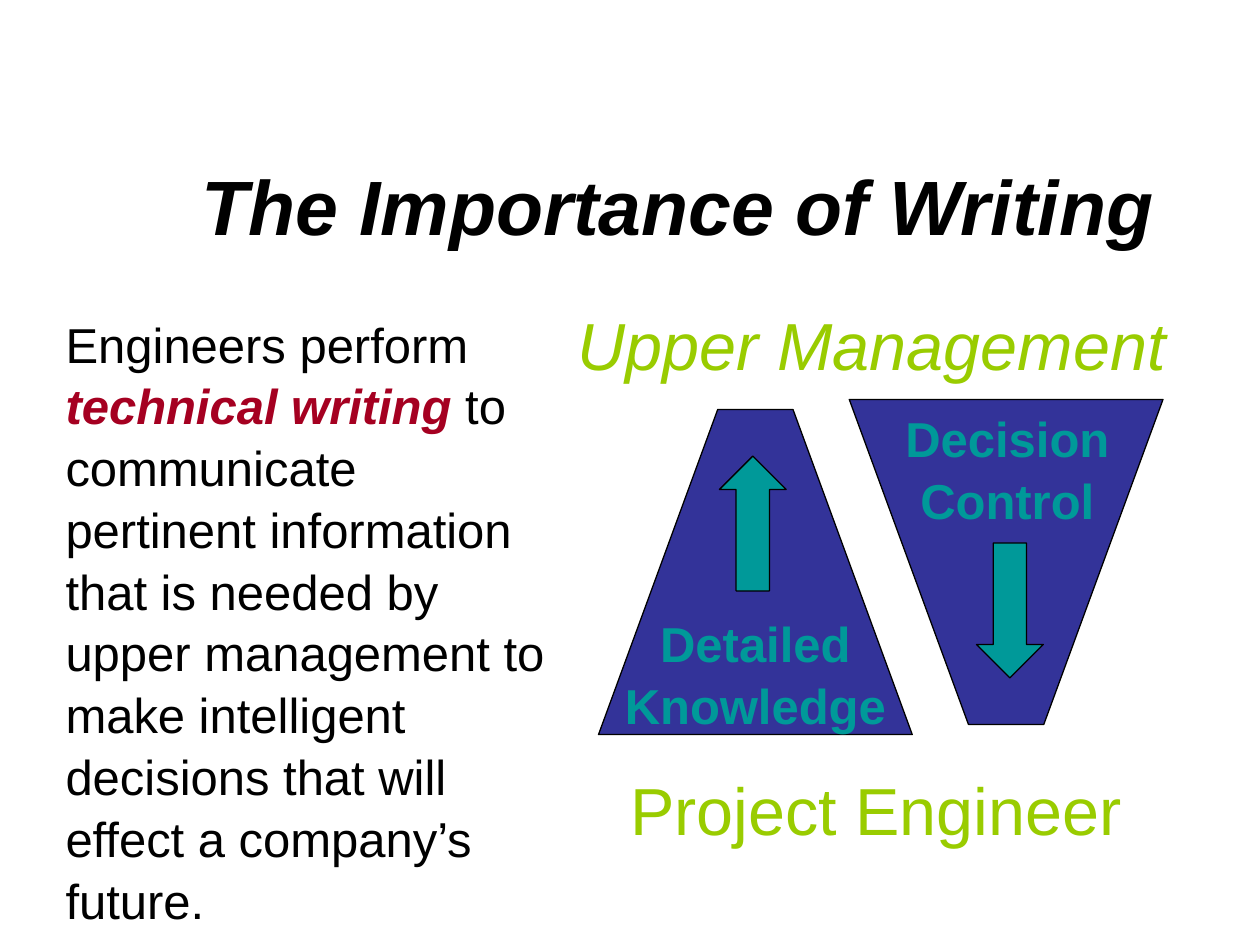
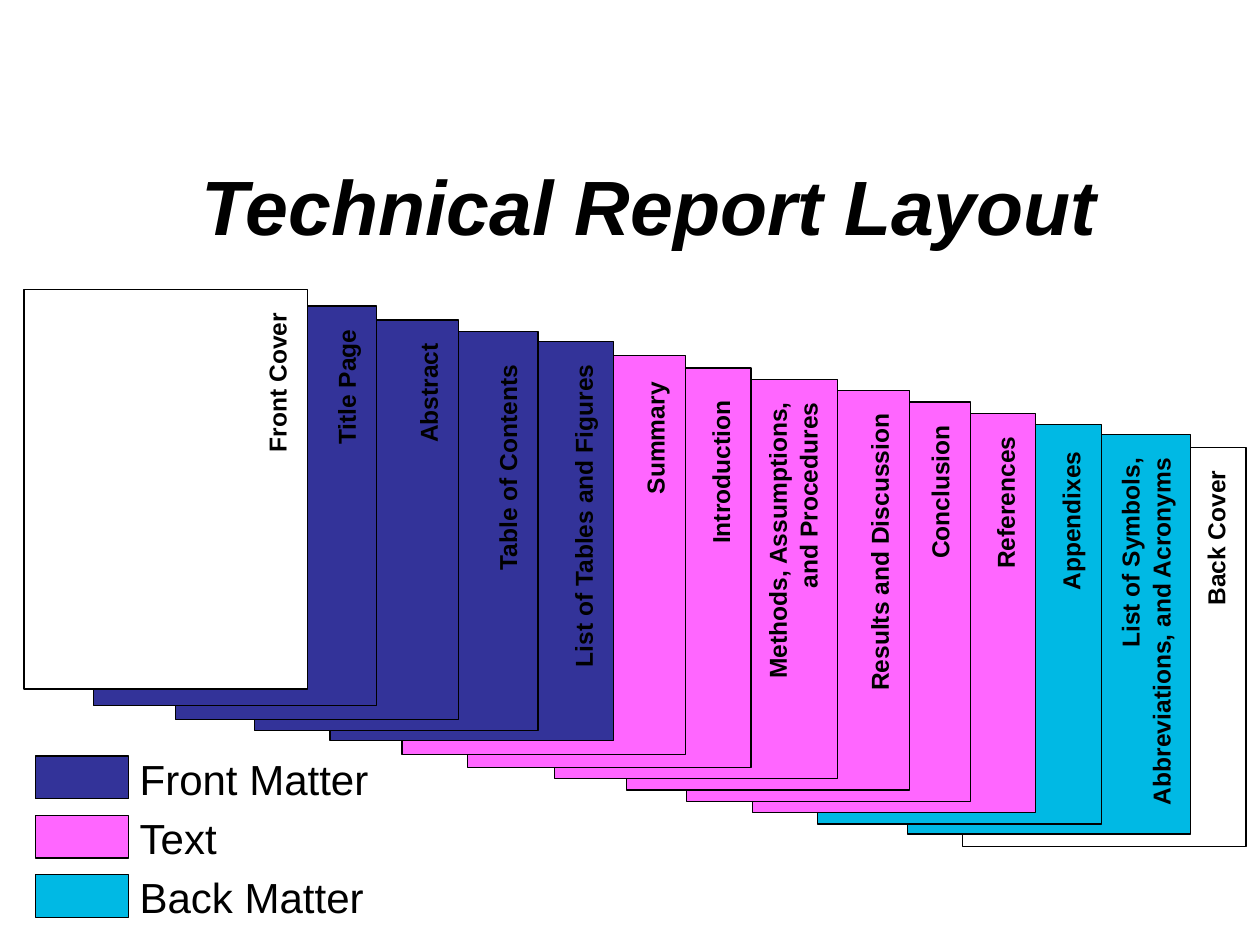
from dataclasses import dataclass
from typing import Any

from lxml.etree import SubElement
from pptx import Presentation
from pptx.dml.color import RGBColor
from pptx.enum.shapes import MSO_SHAPE
from pptx.enum.text import MSO_ANCHOR, MSO_AUTO_SIZE, PP_ALIGN
from pptx.oxml.ns import qn
from pptx.util import Inches, Pt

BLACK = RGBColor(0x00, 0x00, 0x00)
WHITE = RGBColor(0xFF, 0xFF, 0xFF)
NAVY = RGBColor(0x33, 0x33, 0x99)
PINK = RGBColor(0xFF, 0x66, 0xFF)
CYAN = RGBColor(0x00, 0xB9, 0xE4)
TEAL = RGBColor(0x00, 0x99, 0x99)
LIME = RGBColor(0x99, 0xCC, 0x00)
RED = RGBColor(0xA5, 0x00, 0x21)

# The slide is a grid of 100 columns by 75 rows of square cells.
COLS, ROWS = 100, 75
CELL = Inches(10) // COLS

TITLE = {"size": Pt(44), "bold": True, "italic": True}
BODY = {"size": Pt(28)}
TERM = {"bold": True, "italic": True, "color": RED}
ROLE = {"size": Pt(38), "color": LIME}
FLOW = {"size": Pt(28), "bold": True, "color": TEAL}
KEY = {"size": Pt(24)}
TAB = {"size": Pt(14), "bold": True}


@dataclass(frozen=True)
class Box:
    """A place on the grid, in columns and rows."""
    left: float
    top: float
    width: float
    height: float

    def place(self) -> list[int]:
        return [cells(n) for n in (self.left, self.top, self.width, self.height)]


@dataclass(frozen=True)
class Flow:
    """A tapered panel with its caption and arrow."""
    text: str
    box: Box
    words: Box
    arrow: Box
    down: bool


@dataclass(frozen=True)
class Page:
    """A report sheet; span is the length of its upright label."""
    text: str
    left: float
    top: float
    fill: RGBColor
    span: float = 13.3
    align: PP_ALIGN = PP_ALIGN.RIGHT
    lines: int = 1
    gap: float = 0.85


TITLE_BOX = Box(15, 11.7, 83.3, 8.3)
BODY_BOX = Box(4.2, 24.2, 40.8, 47.7)
SHEET_W, SHEET_H = 22.5, 31.7
TAPER = 0.38

ROLES = [
    ("Upper Management", Box(44.2, 23.3, 50, 7.3), True),
    ("Project Engineer", Box(45.8, 60.2, 47.5, 7.3), False),
]
FLOWS = [
    Flow("Detailed Knowledge", Box(47.5, 32.5, 24.9, 25.8),
         Box(48.3, 48, 23.3, 10.3), Box(57.1, 36.2, 5.3, 10.7), False),
    Flow("Decision Control", Box(67.4, 31.7, 24.9, 25.8),
         Box(68.3, 31.7, 23.3, 10.3), Box(77.5, 43.1, 5.3, 10.7), True),
]
KEYS = [("Front Matter", NAVY), ("Text", PINK), ("Back Matter", CYAN)]
PAGES = [
    Page("Front Cover", 1.9, 23, WHITE),
    Page("Title Page", 7.4, 24.3, NAVY),
    Page("Abstract", 13.9, 25.4, NAVY),
    Page("Table of Contents", 20.2, 26.3, NAVY, 19.1, PP_ALIGN.LEFT),
    Page("List of Tables and Figures", 26.2, 27.1, NAVY, 26.4),
    Page("Summary", 31.9, 28.2, PINK, 13.8, gap=1.15),
    Page("Introduction", 37.1, 29.2, PINK, 13.8, PP_ALIGN.LEFT, gap=1.15),
    Page("Methods, Assumptions, and Procedures", 44, 30.1, PINK, 26.6, lines=2),
    Page("Results and Discussion", 49.7, 31, PINK, 26.6),
    Page("Conclusion", 54.5, 31.9, PINK, 26.6),
    Page("References", 59.7, 32.8, PINK, 26.6),
    Page("Appendixes", 64.9, 33.7, CYAN, 13.3, PP_ALIGN.LEFT),
    Page("List of Symbols, Abbreviations, and Acronyms", 72, 34.5, CYAN, 29.8, lines=2),
    Page("Back Cover", 76.4, 35.5, WHITE),
]


def cells(count: float) -> int:
    return round(count * CELL)


def style(font: Any, form: dict[str, Any]) -> None:
    """Apply a format; anything it leaves out is plain black Arial."""
    look = {"name": "Arial", "bold": False, "italic": False, "color": BLACK, **form}
    font.color.rgb = look.pop("color")
    for name, value in look.items():
        setattr(font, name, value)


def write(shape: Any, runs: list[tuple[str, dict]], align: PP_ALIGN = PP_ALIGN.LEFT) -> None:
    frame = shape.text_frame
    setup = {"word_wrap": True, "auto_size": MSO_AUTO_SIZE.NONE,
             "vertical_anchor": MSO_ANCHOR.TOP}
    for name, value in setup.items():
        setattr(frame, name, value)
    para = frame.paragraphs[0]
    layout = {"alignment": align, "line_spacing": 1.05, "space_before": Pt(0)}
    for name, value in layout.items():
        setattr(para, name, value)
    for text, form in runs:
        run = para.add_run()
        run.text = text
        style(run.font, form)


def add_text(slide: Any, box: Box, text: str, form: dict,
             align: PP_ALIGN = PP_ALIGN.LEFT) -> None:
    write(slide.shapes.add_textbox(*box.place()), [(text, form)], align)


def paint(shape: Any, fill: RGBColor, edge: bool = True) -> None:
    shape.shadow.inherit = False
    shape.fill.solid()
    shape.fill.fore_color.rgb = fill
    if edge:
        shape.line.color.rgb = BLACK
        shape.line.width = Pt(0.75)
    else:
        shape.line.fill.background()


def add_form(slide: Any, kind: MSO_SHAPE, box: Box, fill: RGBColor,
             edge: bool = True, turn: float = 0) -> Any:
    shape = slide.shapes.add_shape(kind, *box.place())
    paint(shape, fill, edge)
    shape.rotation = turn
    return shape


def fill_holder(holder: Any, box: Box, runs: list[tuple[str, dict]]) -> None:
    names = ("left", "top", "width", "height")
    for name, value in zip(names, box.place()):
        setattr(holder, name, value)
    props = holder.text_frame.paragraphs[0]._p.get_or_add_pPr()
    for name in ("marL", "indent"):
        props.set(name, "0")
    SubElement(props, qn("a:buNone"))
    write(holder, runs)


def add_slide(deck: Any, layout: int, title: str) -> Any:
    slide = deck.slides.add_slide(deck.slide_layouts[layout])
    fill_holder(slide.shapes.title, TITLE_BOX, [(title, TITLE)])
    return slide


def add_flow(slide: Any, flow: Flow) -> None:
    box = flow.box
    right, base = box.left + box.width, box.top + box.height
    inset = box.width * TAPER
    wide, slim = (box.top, base) if flow.down else (base, box.top)
    spots = [(box.left, wide), (box.left + inset, slim),
             (right - inset, slim), (right, wide)]
    first, *rest = [(cells(x), cells(y)) for x, y in spots]
    build = slide.shapes.build_freeform(*first)
    build.add_line_segments(rest, close=True)
    paint(build.convert_to_shape(), NAVY)
    add_text(slide, flow.words, flow.text, FLOW, PP_ALIGN.CENTER)
    add_form(slide, MSO_SHAPE.UP_ARROW, flow.arrow, TEAL, turn=180 if flow.down else 0)


def add_page(slide: Any, page: Page) -> None:
    """Draw a sheet with its label turned to read upward at the right edge."""
    sheet = Box(page.left, page.top, SHEET_W, SHEET_H)
    add_form(slide, MSO_SHAPE.RECTANGLE, sheet, page.fill)
    depth = 0.9 + 2.4 * page.lines
    mid_x = page.left + SHEET_W - 0.9 - depth / 2
    mid_y = page.top + page.gap + page.span / 2
    tab = Box(mid_x - page.span / 2, mid_y - depth / 2, page.span, depth)
    label = add_form(slide, MSO_SHAPE.RECTANGLE, tab, page.fill, edge=False, turn=270)
    write(label, [(page.text, TAB)], page.align)


def draw_writing(deck: Any) -> None:
    slide = add_slide(deck, 1, "The Importance of Writing")
    fill_holder(slide.placeholders[1], BODY_BOX, [
        ("Engineers perform ", BODY),
        ("technical writing", BODY | TERM),
        (" to communicate pertinent information that is needed by upper management"
         " to make intelligent decisions that will effect a company’s future.", BODY),
    ])
    for text, box, slant in ROLES:
        add_text(slide, box, text, ROLE | {"italic": slant}, PP_ALIGN.CENTER)
    for flow in FLOWS:
        add_flow(slide, flow)


def draw_report(deck: Any) -> None:
    slide = add_slide(deck, 5, "Technical Report Layout")
    for row, (text, fill) in enumerate(KEYS):
        top = 60 + 4.7 * row
        add_form(slide, MSO_SHAPE.RECTANGLE, Box(2.8, top, 7.4, 3.4), fill)
        add_text(slide, Box(10.1, top - 0.9, 20.9, 5), text, KEY)
    for page in reversed(PAGES):
        add_page(slide, page)


def main() -> None:
    deck = Presentation()
    deck.slide_width, deck.slide_height = COLS * CELL, ROWS * CELL
    draw_writing(deck)
    draw_report(deck)
    deck.save("out.pptx")


if __name__ == "__main__":
    main()
